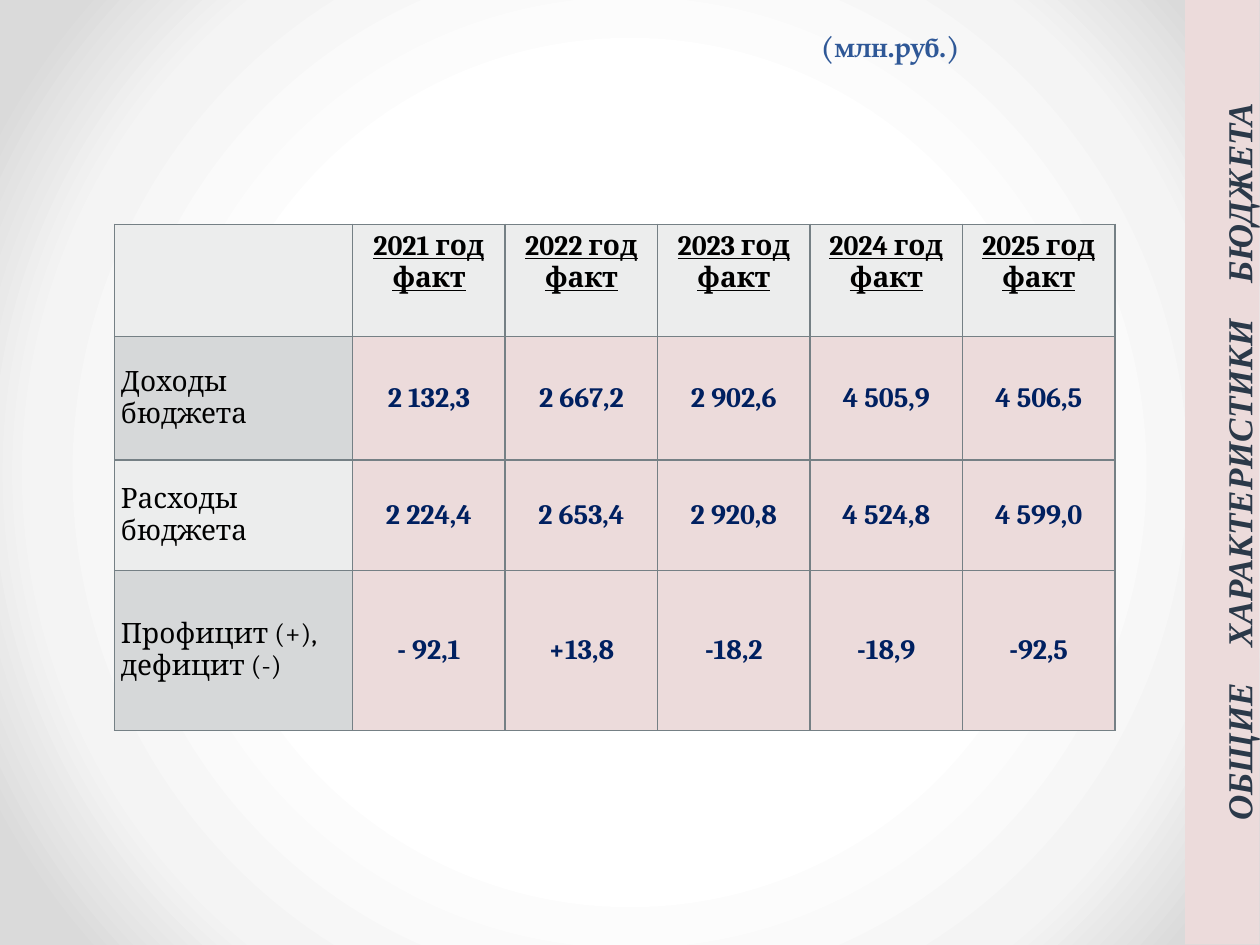
from lxml import etree
from pptx import Presentation
from pptx.dml.color import RGBColor
from pptx.enum import shapes, text
from pptx.oxml import ns, parse_xml
from pptx.util import Inches, Pt

UNITS = "(млн.руб.)"
SECTION = ["ОБЩИЕ", "ХАРАКТЕРИСТИКИ", "БЮДЖЕТА"]
YEARS = [2021, 2022, 2023, 2024, 2025]
BUDGET = [
    ("Доходы бюджета", ["2 132,3", "2 667,2", "2 902,6", "4 505,9", "4 506,5"]),
    ("Расходы бюджета", ["2 224,4", "2 653,4", "2 920,8", "4 524,8", "4 599,0"]),
    ("Профицит (+), дефицит (-)", ["- 92,1", "+13,8", "-18,2", "-18,9", "-92,5"]),
]
COL_WIDTHS = [1.89] + [1.21] * len(YEARS)
ROW_HEIGHTS = [0.89, 0.98, 0.88, 1.27]
BACKGROUND = [(50, "FFFFFF"), (76, "F4F4F4"), (92, "DADADA")]

BLACK = RGBColor(0x00, 0x00, 0x00)
BLUE = RGBColor(0x2F, 0x58, 0x97)
NAVY = RGBColor(0x00, 0x20, 0x60)
SLATE = RGBColor(0x2B, 0x39, 0x49)
PINK = RGBColor(0xEC, 0xDB, 0xDB)
LIGHT = RGBColor(0xEC, 0xED, 0xED)
GREY = RGBColor(0xD6, 0xD8, 0xD9)
BORDER = "758085"

LEFT, CENTER, RIGHT = text.PP_ALIGN.LEFT, text.PP_ALIGN.CENTER, text.PP_ALIGN.RIGHT
TOP, MIDDLE, BOTTOM = text.MSO_ANCHOR.TOP, text.MSO_ANCHOR.MIDDLE, text.MSO_ANCHOR.BOTTOM
TITLE_FONT = dict(name="TeX Gyre Pagella", size=Pt(16.2), bold=True, color=BLUE)
HEADER_FONT = dict(name="Cambria", size=Pt(16), bold=True, underline=True, color=BLACK)
LABEL_FONT = dict(name="Cambria", size=Pt(16), bold=False, color=BLACK)
VALUE_FONT = dict(name="Cambria", size=Pt(16), bold=True, color=NAVY)
SECTION_FONT = dict(name="Times New Roman", size=Pt(20), bold=True, italic=True, color=SLATE)


def set_font(font, values):
    for key, value in values.items():
        if key == "color":
            font.color.rgb = value
        else:
            setattr(font, key, value)


def set_margins(obj, left, top, right, bottom):
    for side, value in dict(left=left, top=top, right=right, bottom=bottom).items():
        setattr(obj, f"margin_{side}", Inches(value))


def set_background(s):
    stops = "".join(f'<a:gs pos="{pos * 1000}"><a:srgbClr val="{color}"/></a:gs>'
                    for pos, color in BACKGROUND)
    s.background.fill.solid()
    bg = s._element.cSld.find(ns.qn("p:bg"))
    solid = bg.find(".//" + ns.qn("a:solidFill"))
    solid.getparent().replace(solid, parse_xml(
        f'<a:gradFill {ns.nsdecls("a")} rotWithShape="1"><a:gsLst>{stops}</a:gsLst>'
        '<a:path path="circle"><a:fillToRect l="50000" t="50000" r="50000" b="50000"/>'
        '</a:path></a:gradFill>'))


def add_borders(cell):
    tc_pr = cell._tc.get_or_add_tcPr()
    for i, side in enumerate(("lnL", "lnR", "lnT", "lnB")):
        tc_pr.insert(i, parse_xml(
            f'<a:{side} {ns.nsdecls("a")} w="12700"><a:solidFill>'
            f'<a:srgbClr val="{BORDER}"/></a:solidFill></a:{side}>'))


def fill_cell(cell, words, font, fill, align, anchor):
    cell.fill.solid()
    cell.fill.fore_color.rgb = fill
    cell.vertical_anchor = anchor
    set_margins(cell, 0.05, 0.05, 0.05, 0.05)
    cell.text = words
    for p in cell.text_frame.paragraphs:
        p.alignment = align
        set_font(p.font, font)
        for r in p.runs:
            set_font(r.font, font)
    add_borders(cell)


def add_title(s):
    title = s.shapes.title
    title.left, title.top, title.width, title.height = map(Inches, (5.16, 0.1, 3.7, 0.4))
    tf = title.text_frame
    tf.vertical_anchor = BOTTOM
    tf.auto_size = text.MSO_AUTO_SIZE.NONE
    set_margins(tf, 0.1, 0, 1.24, 0)
    p = tf.paragraphs[0]
    p.alignment = RIGHT
    r = p.add_run()
    r.text = UNITS
    set_font(r.font, TITLE_FONT)


def add_budget_table(s):
    frame = s.shapes.add_table(len(ROW_HEIGHTS), len(COL_WIDTHS), Inches(0.91), Inches(1.78),
                               Inches(sum(COL_WIDTHS)), Inches(sum(ROW_HEIGHTS)))
    table = frame.table
    for col, width in zip(table.columns, COL_WIDTHS):
        col.width = Inches(width)
    for row, height in zip(table.rows, ROW_HEIGHTS):
        row.height = Inches(height)
    headers = [""] + [f"{year} год\nфакт" for year in YEARS]
    for c, header in enumerate(headers):
        fill_cell(table.cell(0, c), header, HEADER_FONT, LIGHT, CENTER, TOP)
    for i, (label, values) in enumerate(BUDGET, 1):
        fill_cell(table.cell(i, 0), label, LABEL_FONT, GREY if i % 2 else LIGHT, LEFT, MIDDLE)
        for c, value in enumerate(values, 1):
            fill_cell(table.cell(i, c), value, VALUE_FONT, PINK, CENTER, MIDDLE)


def add_section_bar(s):
    bar = s.shapes.add_shape(shapes.MSO_SHAPE.RECTANGLE, Inches(5.95), Inches(3.45),
                             Inches(7.5), Inches(0.59))
    bar.rotation = 270
    bar.shadow.inherit = False
    bar.fill.solid()
    bar.fill.fore_color.rgb = PINK
    bar.line.fill.background()
    tf = bar.text_frame
    tf.word_wrap = True
    tf.vertical_anchor = BOTTOM
    set_margins(tf, 0.21, 0, 0.05, 0)
    p = tf.paragraphs[0]
    p.alignment = CENTER
    for i, word in enumerate(SECTION):
        for part in ([" "] if i else []) + [word]:
            r = p.add_run()
            r.text = part
            set_font(r.font, SECTION_FONT)
            if part == " ":
                r.font._element.set("spc", "1500")  # wide gap between words


def main():
    prs = Presentation()
    prs.slide_width, prs.slide_height = Inches(10), Inches(7.5)
    s = prs.slides.add_slide(prs.slide_layouts[5])
    set_background(s)
    add_title(s)
    add_budget_table(s)
    add_section_bar(s)
    prs.save("out.pptx")


if __name__ == "__main__":
    main()
